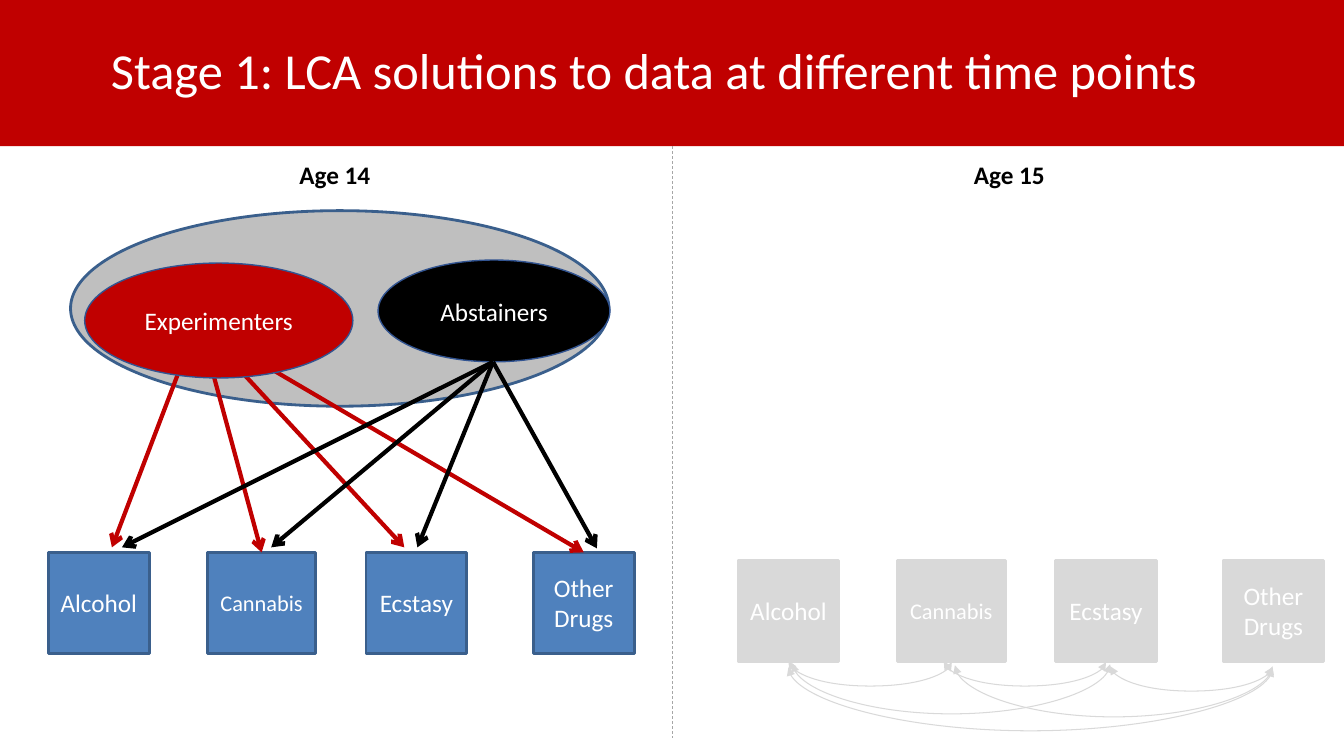
from lxml import etree
from pptx import Presentation
from pptx.dml.color import RGBColor
from pptx.enum.dml import MSO_LINE
from pptx.enum.shapes import MSO_CONNECTOR as CONN, MSO_SHAPE as SHAPE
from pptx.enum.text import MSO_ANCHOR as ANCHOR, MSO_AUTO_SIZE as FIT, PP_ALIGN as ALIGN
from pptx.oxml.ns import qn
from pptx.util import Pt

EMU_PER_PX = 9144  # 100 px to the inch
FONT = "Calibri"
COLORS = {
    "red": "C00000", "black": "000000", "white": "FFFFFF",
    "blue": "4F81BD", "navy": "3A5F8C", "indigo": "325491",
    "silver": "BFBFBF", "pale": "D9D9D9", "grey": "A6A6A6",
}


def px(n):
    return round(n * EMU_PER_PX)


def rgb(name):
    return RGBColor.from_string(COLORS[name])


class Deck:
    def __init__(self, width, height):
        self.prs = Presentation()
        self.prs.slide_width, self.prs.slide_height = px(width), px(height)
        self.s = self.prs.slides.add_slide(self.prs.slide_layouts[5])

    def run(self, p, text, size, color, bold=False):
        r = p.add_run()
        r.text = text
        r.font.name, r.font.size, r.font.bold = FONT, Pt(size), bold
        r.font.color.rgb = rgb(color)

    def title(self, text, x, y, w, h, indent):
        sp = self.s.shapes.title
        sp.left, sp.top, sp.width, sp.height = map(px, (x, y, w, h))
        sp.fill.solid()
        sp.fill.fore_color.rgb = rgb("red")
        tf = sp.text_frame
        tf.auto_size, tf.vertical_anchor = FIT.NONE, ANCHOR.MIDDLE
        tf.margin_left = px(indent)
        p = tf.paragraphs[0]
        p.alignment, p.line_spacing = ALIGN.LEFT, 0.9
        self.run(p, text, 36, "white")

    def label(self, text, x, y, w, h):
        tf = self.s.shapes.add_textbox(*map(px, (x, y, w, h))).text_frame
        tf.word_wrap, tf.auto_size = False, FIT.SHAPE_TO_FIT_TEXT
        self.run(tf.paragraphs[0], text, 18, "black", bold=True)

    def shape(self, kind, x, y, w, h, fill, line, weight, text="", size=18):
        sp = self.s.shapes.add_shape(kind, *map(px, (x, y, w, h)))
        sp.shadow.inherit = False
        sp.fill.solid()
        sp.fill.fore_color.rgb = rgb(fill)
        sp.line.color.rgb, sp.line.width = rgb(line), Pt(weight)
        if text:
            tf = sp.text_frame
            tf.vertical_anchor = ANCHOR.MIDDLE
            tf.paragraphs[0].alignment = ALIGN.CENTER
            self.run(tf.paragraphs[0], text, size, "white")
        return sp

    def line(self, start, end, color, weight, kind=CONN.STRAIGHT, head=None, tail=None):
        c = self.s.shapes.add_connector(kind, *map(px, (*start, *end)))
        c.line.color.rgb, c.line.width = rgb(color), Pt(weight)
        ln = c.line._get_or_add_ln()
        for tag, arrow in (("a:headEnd", head), ("a:tailEnd", tail)):
            if arrow:
                etree.SubElement(ln, qn(tag), type=arrow)
        etree.SubElement(c.element.spPr, qn("a:effectLst"))
        return c

    def arc(self, x1, x2, y, depth, color):
        """Double-headed curve that hangs `depth` below two points 1 px apart in height."""
        mid, half = (x1 + x2) / 2, (x2 - x1) / 2
        c = self.line((mid + 0.5, y + 0.5 - half), (mid - 0.5, y + 0.5 + half),
                      color, 0.75, CONN.CURVE, "triangle", "triangle")
        c.element.spPr.find(qn("a:xfrm")).set("rot", "16200000")
        geom = c.element.spPr.find(qn("a:prstGeom"))
        guides = geom.find(qn("a:avLst"))
        if guides is None:
            guides = etree.SubElement(geom, qn("a:avLst"))
        etree.SubElement(guides, qn("a:gd"), name="adj1", fmla=f"val {depth * 100000}")


def main():
    d = Deck(1333, 750)
    d.title("Stage 1: LCA solutions to data at different time points", 0, 0, 1333, 145, 110)

    # Drug boxes for both ages
    drugs = [("Alcohol", 48, 100, 18), ("Cannabis", 206, 107, 16),
             ("Ecstasy", 363, 100, 18), ("Other Drugs", 529, 100, 18)]
    boxes = {}
    for dx, y, fill, line in ((0, 548, "blue", "navy"), (684, 556, "pale", "pale")):
        for name, x, w, size in drugs:
            boxes[dx, name] = d.shape(SHAPE.RECTANGLE, x + dx, y, w, 100,
                                      fill, line, 2, name, size)
    d.label("Age 14", 287, 153, 91, 40)
    d.label("Age 15", 956, 153, 91, 40)

    # Associations between the drugs at age 15
    for x1, x2, y, depth in ((782, 1262, 662, 64), (782, 944, 656, 25),
                             (936, 1097, 656, 25), (1101, 1262, 661, 25),
                             (786, 1101, 658, 51), (947, 1262, 660, 52)):
        d.arc(x1, x2, y, depth, "pale")

    # Divider between the ages
    d.line((667, 145), (667, 732), "grey", 0.5).line.dash_style = MSO_LINE.DASH

    # Latent classes at age 14 and their arrows to the drugs
    d.shape(SHAPE.OVAL, 70, 209, 534, 194, "silver", "navy", 2)
    for start, end, drug in (((199, 312), (111, 543), None),
                             ((199, 325), (260, 548), "Cannabis"),
                             ((199, 325), (401, 543), None),
                             ((199, 325), (579, 548), "Other Drugs")):
        c = d.line(start, end, "red", 3, tail="arrow")
        if drug:
            c.end_connect(boxes[0, drug], 0)
    d.shape(SHAPE.OVAL, 84, 261, 266, 114, "red", "indigo", 1, "Experimenters")
    d.shape(SHAPE.OVAL, 375, 258, 230, 101, "black", "indigo", 1, "Abstainers")
    for end in ((121, 543), (269, 543), (414, 543), (592, 544)):
        d.line((489, 359), end, "black", 3, tail="arrow")

    d.prs.save("out.pptx")


if __name__ == "__main__":
    main()
